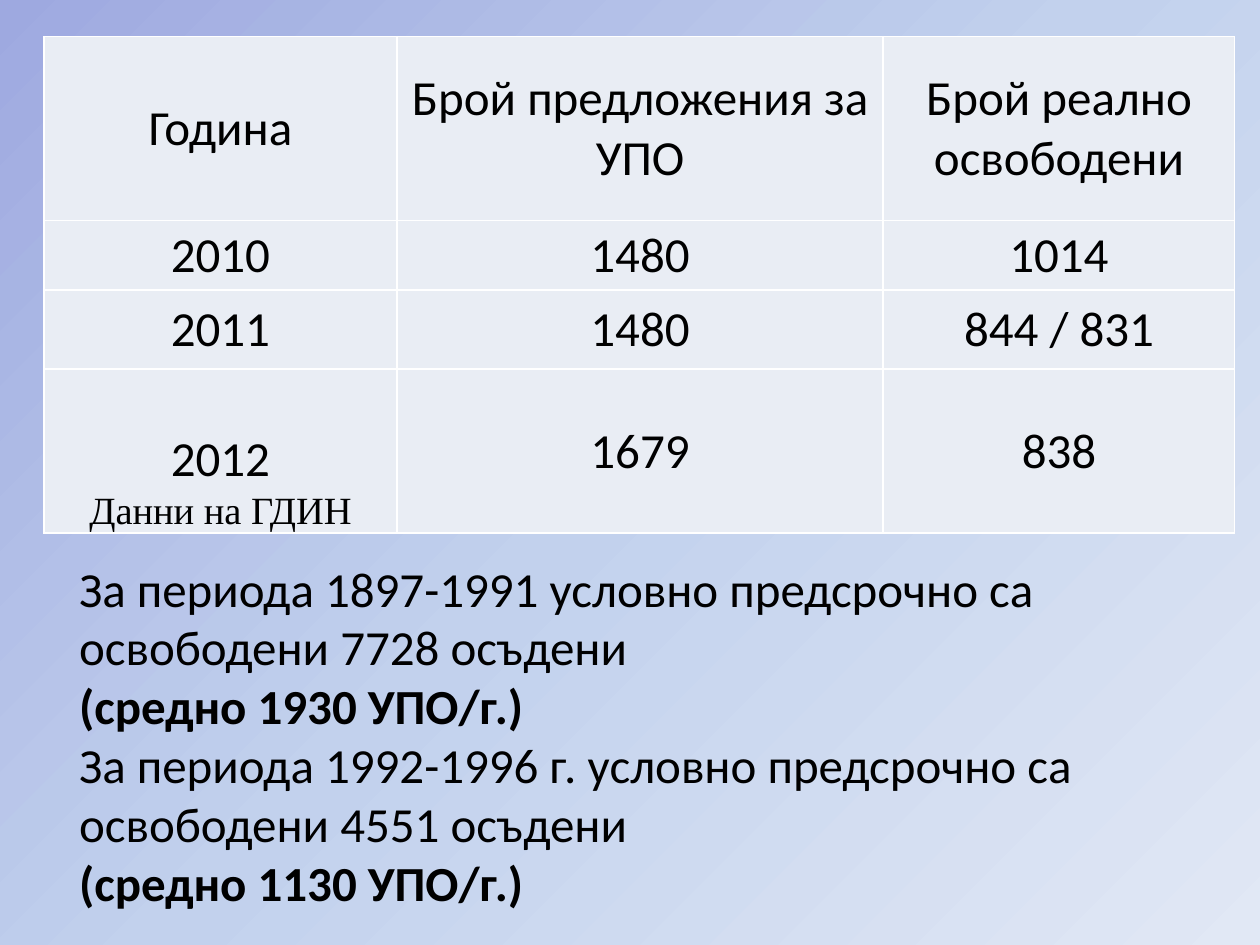
from copy import deepcopy

from lxml import etree
from pptx import Presentation, util as u
from pptx.dml.color import RGBColor
from pptx.enum import text as t
from pptx.oxml.ns import qn


def rgb(value):
    return RGBColor.from_string(value)


def write(paragraph, content, size=28, font="Calibri", bold=False, align=t.PP_ALIGN.LEFT):
    paragraph.alignment = align
    run = paragraph.add_run()
    run.text = content
    run.font.size = u.Pt(size)
    run.font.name = font
    run.font.bold = bold
    run.font.color.rgb = rgb("000000")


deck = Presentation()
deck.slide_width, deck.slide_height = u.Inches(10), u.Inches(7.5)
slide = deck.slides.add_slide(deck.slide_layouts[6])

# Diagonal three-stop background
backdrop = slide.background.fill
backdrop.gradient()
backdrop.gradient_angle = 315
stop_list = next(slide.element.iter(qn("a:gsLst")))
stop_list.insert(1, deepcopy(stop_list[0]))
for stop, (position, color) in zip(
        backdrop.gradient_stops, [(0, "9EA9E0"), (0.5, "C2D1ED"), (1, "E1E8F5")]):
    stop.position = position
    stop.color.rgb = rgb(color)

# Releases by year
rows = [
    ["Година", "Брой предложения за УПО", "Брой реално освободени"],
    ["2010", "1480", "1014"],
    ["2011", "1480", "844 / 831"],
    ["2012", "1679", "838"],
]
widths = [2.8, 3.86, 2.79]
heights = [1.46, 0.55, 0.63, 1.3]
releases = slide.shapes.add_table(
    len(rows), len(widths), u.Inches(0.35), u.Inches(0.29),
    u.Inches(sum(widths)), u.Inches(sum(heights))).table
for column, width in zip(releases.columns, widths):
    column.width = u.Inches(width)

for r, (values, height) in enumerate(zip(rows, heights)):
    releases.rows[r].height = u.Inches(height)
    for c, value in enumerate(values):
        cell = releases.cell(r, c)
        cell.margin_left = cell.margin_right = cell.margin_top = u.Inches(0.01)
        cell.margin_bottom = 0
        cell.vertical_anchor = t.MSO_ANCHOR.MIDDLE
        write(cell.text_frame.paragraphs[0], value, align=t.PP_ALIGN.CENTER)
        # White borders go before the cell fill
        properties = cell._tc.get_or_add_tcPr()
        for side in ("a:lnL", "a:lnR", "a:lnT", "a:lnB"):
            line = etree.SubElement(properties, qn(side), w=str(u.Pt(1)))
            paint = etree.SubElement(line, qn("a:solidFill"))
            etree.SubElement(paint, qn("a:srgbClr"), val="FFFFFF")
        cell.fill.solid()
        cell.fill.fore_color.rgb = rgb("E9EDF4")

# Data source under the last year
last_year = releases.cell(3, 0)
last_year.margin_top = u.Inches(0.48)
write(last_year.text_frame.add_paragraph(), "Данни на ГДИН", size=22,
      font="Times New Roman", align=t.PP_ALIGN.CENTER)

# Earlier periods, with yearly averages in bold
periods = slide.shapes.add_textbox(
    u.Inches(0.53), u.Inches(5.64), u.Inches(9), u.Inches(0.38)).text_frame
periods.word_wrap = True
periods.vertical_anchor = t.MSO_ANCHOR.MIDDLE
summary = [
    ("За периода 1897-1991 условно предсрочно са освободени 7728 осъдени", False),
    ("(средно 1930 УПО/г.)", True),
    ("За периода 1992-1996 г. условно предсрочно са освободени 4551 осъдени", False),
    ("(средно 1130 УПО/г.)", True),
]
for i, (sentence, bold) in enumerate(summary):
    paragraph = periods.add_paragraph() if i else periods.paragraphs[0]
    write(paragraph, sentence, bold=bold)

deck.save("out.pptx")
